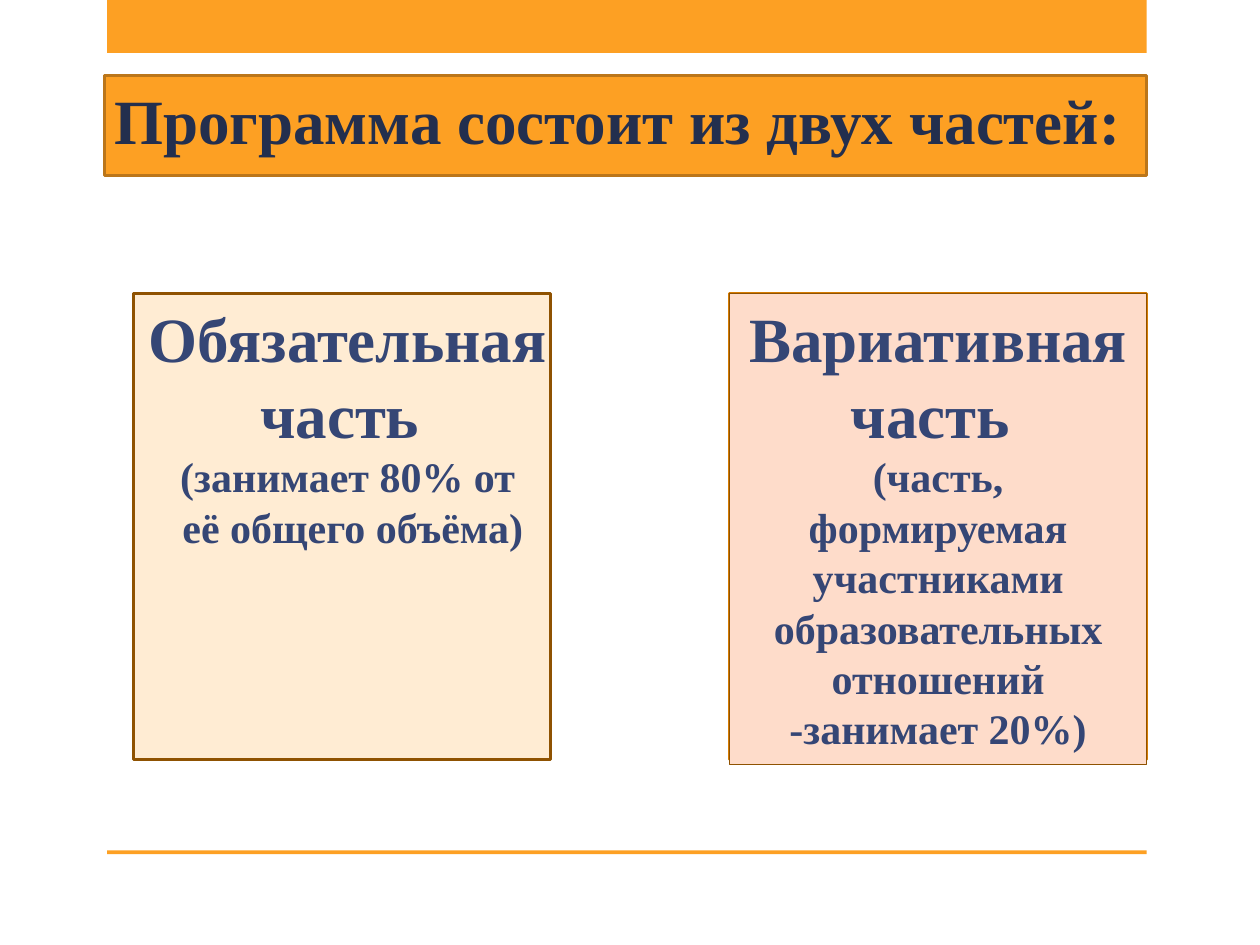
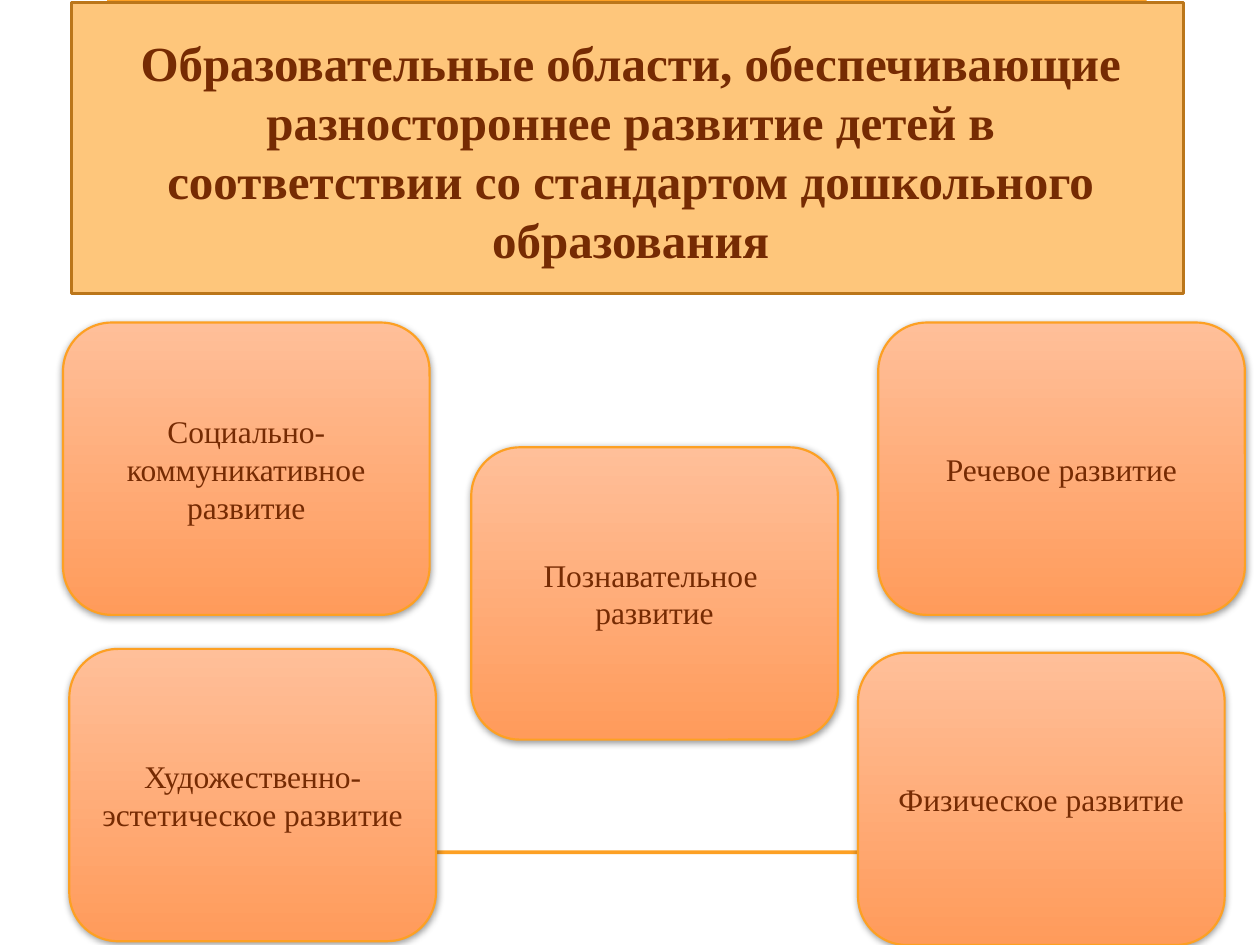
import dataclasses

import lxml.etree
import pptx
import pptx.dml.color
import pptx.enum.shapes
import pptx.enum.text
import pptx.oxml.ns
import pptx.util

Inches = pptx.util.Inches
Pt = pptx.util.Pt
MSO_SHAPE = pptx.enum.shapes.MSO_SHAPE
ANCHOR = pptx.enum.text.MSO_ANCHOR


def rgb(color):
    return pptx.dml.color.RGBColor.from_string(color)


@dataclasses.dataclass(frozen=True)
class Theme:
    font: str = "Times New Roman"
    orange: str = "FDA023"
    orange_dark: str = "BB761A"
    orange_soft: str = "FEC67B"
    cream: str = "FFECD3"
    peach: str = "FEDCCA"
    frame: str = "8F5201"
    frame_light: str = "D67C02"
    tile_top: str = "FFBF99"
    tile_bottom: str = "FF9B5B"
    navy: str = "232F4E"
    blue: str = "354675"
    brown: str = "762B03"
    heading: int = 36
    subheading: int = 28
    text: int = 24
    label: int = 18


class Deck:
    def __init__(self, theme):
        self.theme = theme
        self.prs = pptx.Presentation()
        self.prs.slide_width = Inches(10)
        self.prs.slide_height = Inches(7.5)
        self.s = None

    def slide(self):
        self.s = self.prs.slides.add_slide(self.prs.slide_layouts[5])
        self.box((0.85, 0, 8.25, 0.42), self.theme.orange)
        self.box((0.85, 6.75, 8.25, 0.03), self.theme.orange)

    def box(self, at, fill, line=None, width=1.75, kind=MSO_SHAPE.RECTANGLE):
        sp = self.s.shapes.add_shape(kind, *map(Inches, at))
        sp.shadow.inherit = False
        sp.fill.solid()
        sp.fill.fore_color.rgb = rgb(fill)
        if line:
            sp.line.color.rgb = rgb(line)
            sp.line.width = Pt(width)
        else:
            sp.line.fill.background()
        return sp

    def add_text(self, sp, paragraphs, color, bold=True, anchor=ANCHOR.TOP, grow=True):
        tf = sp.text_frame
        tf.word_wrap = True
        tf.vertical_anchor = anchor
        if grow:
            tf.auto_size = pptx.enum.text.MSO_AUTO_SIZE.SHAPE_TO_FIT_TEXT
        for i, (text, size) in enumerate(paragraphs):
            p = tf.add_paragraph() if i else tf.paragraphs[0]
            p.alignment = pptx.enum.text.PP_ALIGN.CENTER
            r = p.add_run()
            r.text = text
            r.font.name = self.theme.font
            r.font.size = Pt(size)
            r.font.bold = bold
            r.font.color.rgb = rgb(color)

    def title(self, at, text, size, color):
        sp = self.s.shapes.title
        sp.left, sp.top, sp.width, sp.height = map(Inches, at)
        sp.element.getparent().append(sp.element)
        self.add_text(sp, [(text, size)], color)

    def text(self, at, paragraphs, color):
        sp = self.s.shapes.add_textbox(*map(Inches, at))
        self.add_text(sp, paragraphs, color)

    def tile(self, left, top, lines):
        t = self.theme
        sp = self.box((left, top, 2.91, 2.32), t.tile_top, t.orange, 1.25,
                      MSO_SHAPE.ROUNDED_RECTANGLE)
        sp.fill.gradient()
        sp.fill.gradient_angle = 270
        for stop, color in zip(sp.fill.gradient_stops, (t.tile_top, t.tile_bottom)):
            stop.color.rgb = rgb(color)
        self.cast_shadow(sp)
        self.add_text(sp, [(line, t.label) for line in lines], t.brown,
                      bold=False, anchor=ANCHOR.MIDDLE, grow=False)

    def cast_shadow(self, sp):
        qn = pptx.oxml.ns.qn
        effects = sp.element.spPr.find(qn("a:effectLst"))
        shadow = lxml.etree.SubElement(
            effects, qn("a:outerShdw"), blurRad=str(Pt(4)), dist=str(Pt(1)),
            dir=str(88 * 60000), rotWithShape="0")
        color = lxml.etree.SubElement(shadow, qn("a:srgbClr"), val="000000")
        lxml.etree.SubElement(color, qn("a:alpha"), val="40000")


def program_parts(deck):
    t = deck.theme
    deck.slide()
    deck.box((0.83, 0.6, 8.27, 0.79), t.orange, t.orange_dark)
    deck.title((0.65, 0.6, 8.5, 0.71), "Программа состоит из двух частей:",
               t.heading, t.navy)
    left, right, top, width, height = 1.06, 5.79, 2.33, 3.31, 3.7
    deck.box((left, top, width, height), t.cream, t.frame)
    deck.box((right, top, width, height), t.cream, t.frame_light)
    deck.text((0.83, top, 3.86, 2.12), [
        ("Обязательная часть ", t.heading),
        ("(занимает 80% от", t.text),
        (" её общего объёма)", t.text),
    ], t.blue)
    variable = deck.box((right, top, width, 3.74), t.peach, t.frame, 0.75)
    deck.add_text(variable, [
        ("Вариативная часть ", t.heading),
        ("(часть, формируемая участниками образовательных отношений "
         "-занимает 20%)", t.text),
    ], t.blue)


def educational_areas(deck):
    t = deck.theme
    deck.slide()
    deck.box((0.57, 0.02, 8.82, 2.31), t.orange_soft, t.orange_dark)
    deck.title((0.83, 0.21, 8.35, 1.99),
               "Образовательные области, обеспечивающие разностороннее развитие "
               "детей в соответствии со стандартом дошкольного образования",
               t.subheading, t.brown)
    areas = [
        (0.5, 2.56, ["Социально-коммуникативное развитие"]),
        (3.74, 3.55, ["Познавательное ", "развитие"]),
        (0.55, 5.15, ["Художественно-эстетическое развитие"]),
        (6.81, 5.18, ["Физическое развитие"]),
        (6.97, 2.56, ["Речевое развитие"]),
    ]
    for left, top, lines in areas:
        deck.tile(left, top, lines)


def main():
    deck = Deck(Theme())
    program_parts(deck)
    educational_areas(deck)
    deck.prs.save("out.pptx")


if __name__ == "__main__":
    main()
